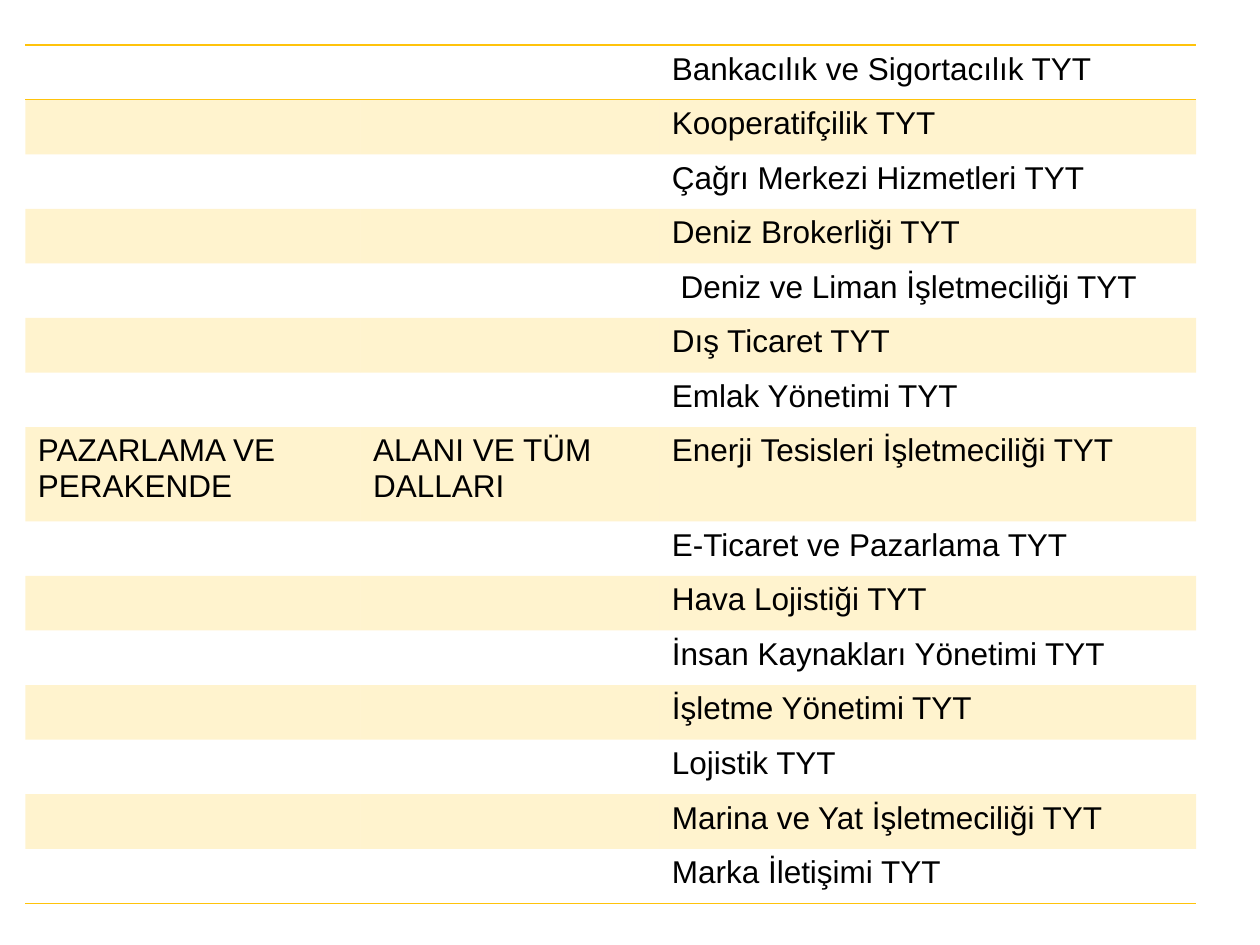
import dataclasses

import lxml.etree
import pptx
import pptx.dml.color
import pptx.oxml.ns
import pptx.util

Cm = pptx.util.Cm
COLORS = {"gold": "FFC30B", "text": "000000"}
BAND_OPACITY = 20000  # thousandths of a percent
COLUMN_WIDTHS = (6.76, 6.02, 10.82)
ROW_HEIGHT = 1.1


@dataclasses.dataclass
class ProgramRow:
    program: str
    field: str = ""
    branch: str = ""
    height: float = ROW_HEIGHT


PROGRAMS = [
    ProgramRow("Bankacılık ve Sigortacılık TYT"),
    ProgramRow("Kooperatifçilik TYT"),
    ProgramRow("Çağrı Merkezi Hizmetleri TYT"),
    ProgramRow("Deniz Brokerliği TYT"),
    ProgramRow(" Deniz ve Liman İşletmeciliği TYT"),
    ProgramRow("Dış Ticaret TYT"),
    ProgramRow("Emlak Yönetimi TYT"),
    ProgramRow("Enerji Tesisleri İşletmeciliği TYT",
               "PAZARLAMA VE PERAKENDE", "ALANI VE TÜM DALLARI", 1.9),
    ProgramRow("E-Ticaret ve Pazarlama TYT"),
    ProgramRow("Hava Lojistiği TYT"),
    ProgramRow("İnsan Kaynakları Yönetimi TYT"),
    ProgramRow("İşletme Yönetimi TYT"),
    ProgramRow("Lojistik TYT"),
    ProgramRow("Marina ve Yat İşletmeciliği TYT"),
    ProgramRow("Marka İletişimi TYT"),
]


def add_child(parent, tag: str, **attributes: str):
    return lxml.etree.SubElement(parent, pptx.oxml.ns.qn(tag), attributes)


def set_borders(cell, ruled_sides: str) -> None:
    """Rule the given sides (of L, R, T, B) in gold and clear the others."""
    properties = cell._tc.get_or_add_tcPr()
    for side in "LRTB":
        border = add_child(properties, f"a:ln{side}", w=str(pptx.util.Pt(1)))
        if side in ruled_sides:
            solid = add_child(border, "a:solidFill")
            add_child(solid, "a:srgbClr", val=COLORS["gold"])
        else:
            add_child(border, "a:noFill")


def set_fill(cell, banded: bool) -> None:
    if not banded:
        cell.fill.background()
        return
    cell.fill.solid()
    cell.fill.fore_color.rgb = pptx.dml.color.RGBColor.from_string(COLORS["gold"])
    color = cell._tc.tcPr.find("a:solidFill/a:srgbClr", pptx.oxml.ns._nsmap)
    add_child(color, "a:alpha", val=str(BAND_OPACITY))


def write_text(cell, text: str) -> None:
    if not text:
        return
    run = cell.text_frame.paragraphs[0].add_run()
    run.text = text
    run.font.name = "Arial"
    run.font.size = pptx.util.Pt(18)
    run.font.color.rgb = pptx.dml.color.RGBColor.from_string(COLORS["text"])


def add_program_table(slide, programs: list[ProgramRow]) -> None:
    table = slide.shapes.add_table(
        len(programs), len(COLUMN_WIDTHS), Cm(0.51), Cm(0.91),
        Cm(sum(COLUMN_WIDTHS)), Cm(sum(row.height for row in programs))).table
    table.first_row = table.horz_banding = False
    for column, width in zip(table.columns, COLUMN_WIDTHS):
        column.width = Cm(width)

    # Gold rules frame the first row and close the table
    ruled_sides = {0: "TB", 1: "T", len(programs) - 1: "B"}
    for index, program_row in enumerate(programs):
        table.rows[index].height = Cm(program_row.height)
        texts = (program_row.field, program_row.branch, program_row.program)
        for cell, text in zip(table.rows[index].cells, texts):
            write_text(cell, text)
            set_borders(cell, ruled_sides.get(index, ""))
            set_fill(cell, banded=index % 2 == 1)


def main() -> None:
    presentation = pptx.Presentation()
    presentation.slide_width, presentation.slide_height = Cm(25.4), Cm(19.05)
    slide = presentation.slides.add_slide(presentation.slide_layouts[6])
    add_program_table(slide, PROGRAMS)
    presentation.save("out.pptx")


if __name__ == "__main__":
    main()
